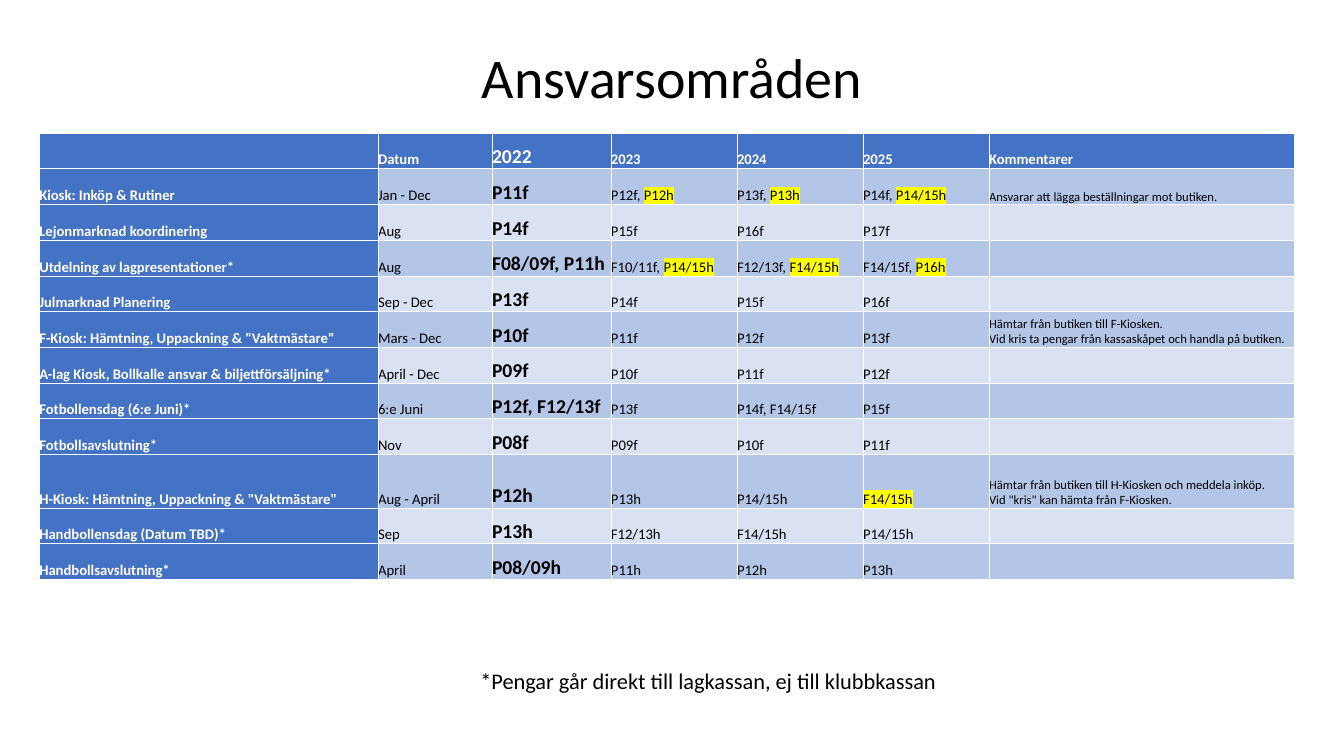
from dataclasses import dataclass

from lxml.etree import SubElement
from pptx import Presentation
from pptx.dml.color import RGBColor
from pptx.enum.text import MSO_ANCHOR as Anchor, PP_ALIGN as Align
from pptx.oxml import parse_xml
from pptx.oxml.ns import nsdecls, qn
from pptx.util import Inches, Pt

FONT = "Calibri"
BLACK, WHITE, BLUE, YELLOW = "000000", "FFFFFF", "4472C4", "FFFF00"
BANDS = ("B4C6E7", "D9E1F2")

WIDTHS = (3.36, 1.13, 1.18, 1.25, 1.25, 1.25, 3.03)
LEFT, TOP, HEIGHT = 0.39, 1.32, 4.43
TALL_ROW, TALL = 9, 0.53
YEAR_COL, NOTE_COL = 2, 6

# Square brackets mark highlighted teams.
ROWS = (
    ("", "Datum", "2022", "2023", "2024", "2025", "Kommentarer"),
    ("Kiosk: Inköp & Rutiner", "Jan - Dec", "P11f", "P12f, [P12h]",
     "P13f, [P13h]", "P14f, [P14/15h]",
     "Ansvarar att lägga beställningar mot butiken."),
    ("Lejonmarknad koordinering", "Aug", "P14f", "P15f", "P16f", "P17f", ""),
    ("Utdelning av lagpresentationer*", "Aug", "F08/09f, P11h",
     "F10/11f, [P14/15h]", "F12/13f, [F14/15h]", "F14/15f, [P16h]", ""),
    ("Julmarknad Planering", "Sep - Dec", "P13f", "P14f", "P15f", "P16f", ""),
    ('F-Kiosk: Hämtning, Uppackning & "Vaktmästare"', "Mars - Dec",
     "P10f", "P11f", "P12f", "P13f",
     "Hämtar från butiken till F-Kiosken.\n"
     "Vid kris ta pengar från kassaskåpet och handla på butiken."),
    ("A-lag Kiosk, Bollkalle ansvar & biljettförsäljning*", "April - Dec",
     "P09f", "P10f", "P11f", "P12f", ""),
    ("Fotbollensdag (6:e Juni)*", "6:e Juni", "P12f, F12/13f", "P13f",
     "P14f, F14/15f", "P15f", ""),
    ("Fotbollsavslutning*", "Nov", "P08f", "P09f", "P10f", "P11f", ""),
    ('H-Kiosk: Hämtning, Uppackning & "Vaktmästare"', "Aug - April",
     "P12h", "P13h", "P14/15h", "[F14/15h]",
     "Hämtar från butiken till H-Kiosken och meddela inköp.\n"
     'Vid "kris" kan hämta från F-Kiosken.'),
    ("Handbollensdag (Datum TBD)*", "Sep", "P13h", "F12/13h", "F14/15h",
     "P14/15h", ""),
    ("Handbollsavslutning*", "April", "P08/09h", "P11h", "P12h", "P13h", ""),
)


@dataclass
class Style:
    size: float
    color: str = BLACK
    bold: bool = False


@dataclass
class Label:
    text: str
    left: float
    top: float
    width: float
    height: float
    style: Style


LABELS = (
    Label("Ansvarsområden", 1.1, 0.19, 11.13, 1.22, Style(40)),
    Label("*Pengar går direkt till lagkassan, ej till klubbkassan",
          1.46, 6.35, 11.13, 0.84, Style(16)),
)


def rgb(code: str) -> RGBColor:
    return RGBColor.from_string(code)


def add_run(para, text: str, style: Style, mark: bool = False) -> None:
    run = para.add_run()
    run.text = text
    font = run.font
    font.name, font.size, font.bold = FONT, Pt(style.size), style.bold
    font.color.rgb = rgb(style.color)
    if mark:
        props = run._r.get_or_add_rPr()
        light = SubElement(props, qn("a:highlight"))
        SubElement(light, qn("a:srgbClr"), val=YELLOW)
        props.find(qn("a:solidFill")).addnext(light)


def add_label(slide, label: Label) -> None:
    box = slide.shapes.add_textbox(
        Inches(label.left), Inches(label.top),
        Inches(label.width), Inches(label.height))
    frame = box.text_frame
    frame.word_wrap = True
    frame.vertical_anchor = Anchor.MIDDLE
    para = frame.paragraphs[0]
    para.alignment, para.line_spacing = Align.CENTER, 0.9
    add_run(para, label.text, label.style)


def add_edges(cell) -> None:
    """Give the cell thin white borders, placed ahead of its fill."""
    props = cell._tc.get_or_add_tcPr()
    for spot, side in enumerate("LRTB"):
        props.insert(spot, parse_xml(
            f'<a:ln{side} {nsdecls("a")} w="{Pt(0.5)}"><a:solidFill>'
            f'<a:srgbClr val="{WHITE}"/></a:solidFill></a:ln{side}>'))


def cell_style(row: int, col: int) -> Style:
    head = row == 0 or col == 0
    if col == YEAR_COL:
        size = 14
    elif col == NOTE_COL and row > 0:
        size = 9
    else:
        size = 10.5
    return Style(size, WHITE if head else BLACK, head or col == YEAR_COL)


def fill_cell(cell, text: str, row: int, col: int) -> None:
    cell.margin_left = cell.margin_right = 0
    cell.margin_top = cell.margin_bottom = 0
    cell.vertical_anchor = Anchor.BOTTOM
    cell.fill.solid()
    head = row == 0 or col == 0
    cell.fill.fore_color.rgb = rgb(BLUE if head else BANDS[(row - 1) % 2])
    add_edges(cell)
    style = cell_style(row, col)
    para = cell.text_frame.paragraphs[0]
    para.font.size = Pt(style.size)
    for num, line in enumerate(text.split("\n")):
        if num:
            para.add_line_break()
        plain, _, team = line.partition("[")
        if plain:
            add_run(para, plain, style)
        if team:
            add_run(para, team.rstrip("]"), style, mark=True)


def add_grid(slide) -> None:
    table = slide.shapes.add_table(
        len(ROWS), len(WIDTHS), Inches(LEFT), Inches(TOP),
        Inches(sum(WIDTHS)), Inches(HEIGHT)).table
    for col, width in zip(table.columns, WIDTHS):
        col.width = Inches(width)
    short = (HEIGHT - TALL) / (len(ROWS) - 1)
    for row, texts in enumerate(ROWS):
        table.rows[row].height = Inches(TALL if row == TALL_ROW else short)
        for col, text in enumerate(texts):
            fill_cell(table.cell(row, col), text, row, col)


def main() -> None:
    deck = Presentation()
    deck.slide_width, deck.slide_height = Inches(13.33), Inches(7.5)
    slide = deck.slides.add_slide(deck.slide_layouts[6])
    for label in LABELS:
        add_label(slide, label)
    add_grid(slide)
    deck.save("out.pptx")


if __name__ == "__main__":
    main()
